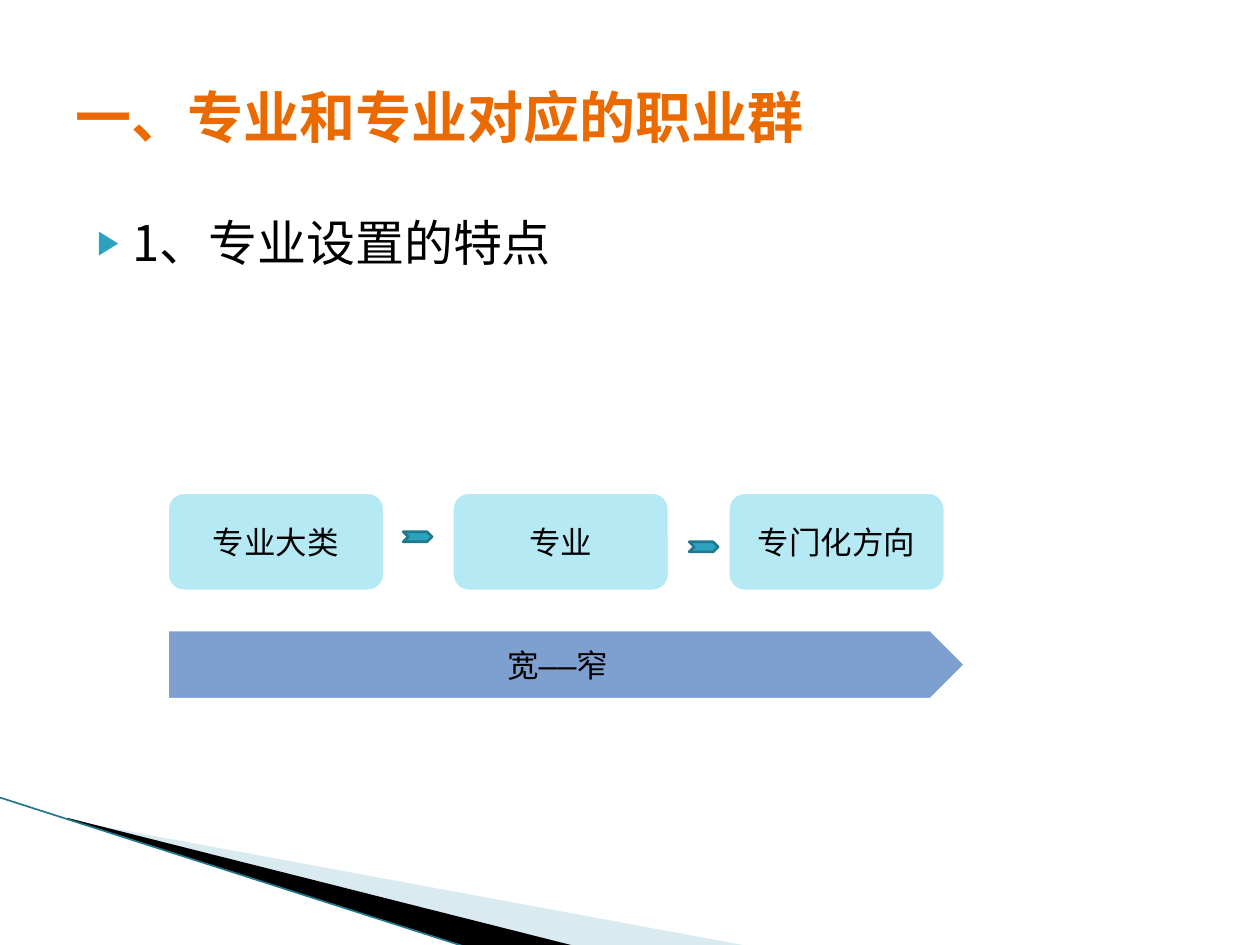
from lxml import etree
from pptx import Presentation
from pptx.dml.color import RGBColor
from pptx.enum import shapes, text
from pptx.oxml.ns import qn
from pptx.util import Inches, Pt

# Grid: 100 columns by 75 rows, each cell a tenth of an inch
COLUMNS, ROWS = 100, 75


def rgb(colour):
    return RGBColor.from_string(colour)


def add_element(parent, tag, **attributes):
    return etree.SubElement(parent, qn(tag), attributes)


class SlideBuilder:
    """Holds the style and the current slide; places are grid columns and rows."""

    heading_font = "Noto Sans CJK SC"
    label_font = "DejaVu Sans Mono"
    ink, accent, accent_dark = "000000", "2DA2BF", "21788D"

    def __init__(self, presentation):
        self.cell_width = presentation.slide_width / COLUMNS
        self.cell_height = presentation.slide_height / ROWS
        self.slide = presentation.slides.add_slide(presentation.slide_layouts[1])
        self.shapes = self.slide.shapes

    def point(self, column, row):
        return round(column * self.cell_width), round(row * self.cell_height)

    def box(self, column, row, width, height):
        return self.point(column, row) + self.point(width, height)

    def format_text(self, paragraph, size, font, colour, bold=False):
        paragraph.font.size = Pt(size)
        paragraph.font.name = font
        paragraph.font.bold = bold
        paragraph.font.color.rgb = rgb(colour)
        properties = paragraph.font._element
        add_element(properties, "a:ea", typeface=font)

    def placeholder(self, shape, place, words, anchor):
        """Fill a placeholder and bring it in front of the decoration."""
        shape.left, shape.top, shape.width, shape.height = self.box(*place)
        shape.element.getparent().append(shape.element)
        frame = shape.text_frame
        frame.text = words
        frame.auto_size = text.MSO_AUTO_SIZE.NONE
        frame.vertical_anchor = anchor
        paragraph = frame.paragraphs[0]
        paragraph.alignment = text.PP_ALIGN.LEFT
        paragraph.space_before = Pt(0)
        return paragraph

    def title(self, words, place):
        paragraph = self.placeholder(self.shapes.title, place, words,
                                     text.MSO_ANCHOR.MIDDLE)
        self.format_text(paragraph, 32, self.heading_font, "EA6A00", bold=True)

    def bullet(self, words, place):
        paragraph = self.placeholder(self.slide.placeholders[1], place, words,
                                     text.MSO_ANCHOR.TOP)
        properties = paragraph._p.get_or_add_pPr()
        properties.set("marL", str(Inches(0.4)))
        properties.set("indent", str(Inches(-0.28)))
        colour = add_element(properties, "a:buClr")
        add_element(colour, "a:srgbClr", val=self.accent)
        add_element(properties, "a:buSzPct", val="68000")
        add_element(properties, "a:buChar", char="▶")
        self.format_text(paragraph, 28, self.heading_font, self.ink)

    def polygon(self, points, fill, opacity=100):
        start, *others = [self.point(*point) for point in points]
        builder = self.shapes.build_freeform(*start)
        builder.add_line_segments(others, close=True)
        shape = builder.convert_to_shape()
        shape.shadow.inherit = False
        shape.line.fill.background()
        shape.fill.solid()
        shape.fill.fore_color.rgb = rgb(fill)
        if opacity < 100:
            colour = shape.element.spPr.find(".//" + qn("a:srgbClr"))
            add_element(colour, "a:alpha", val=str(opacity * 1000))

    def line(self, start, end, colour, width):
        connector = self.shapes.add_connector(
            shapes.MSO_CONNECTOR.STRAIGHT, *self.point(*start), *self.point(*end))
        connector.line.color.rgb = rgb(colour)
        connector.line.width = Pt(width)
        add_element(connector.element.spPr, "a:effectLst")

    def block(self, kind, place, fill, line, words=""):
        shape = self.shapes.add_shape(kind, *self.box(*place))
        shape.shadow.inherit = False
        shape.fill.solid()
        shape.fill.fore_color.rgb = rgb(fill)
        shape.line.color.rgb = rgb(line)
        shape.line.width = Pt(1.5)
        if words:
            frame = shape.text_frame
            frame.text = words
            frame.word_wrap = True
            frame.vertical_anchor = text.MSO_ANCHOR.MIDDLE
            paragraph = frame.paragraphs[0]
            paragraph.alignment = text.PP_ALIGN.CENTER
            self.format_text(paragraph, 18, self.label_font, self.ink)


def main():
    presentation = Presentation()
    presentation.slide_width, presentation.slide_height = Inches(10), Inches(7.5)
    builder = SlideBuilder(presentation)
    kinds = shapes.MSO_SHAPE

    builder.polygon([(5.5, 65.1), (59.5, 75.1), (45.6, 75.1), (5.5, 65)],
                    "A0CBDC", opacity=40)
    builder.polygon([(5.3, 64.9), (45.7, 75.1), (37.2, 75.2), (5.4, 65)],
                    builder.ink)
    builder.line((0, 63.3), (37.1, 75.2), builder.accent_dark, 0.95)

    builder.bullet("1、专业设置的特点", (5.5, 16.4, 90, 49.5))
    builder.title("一、专业和专业对应的职业群", (5, 3, 90, 12.5))

    for column, words in ((13.3, "专业大类"), (35.9, "专业"), (57.8, "专门化方向")):
        builder.block(kinds.FLOWCHART_ALTERNATE_PROCESS,
                      (column, 39.1, 17.2, 7.8), "B5E9F4", "FFFFFF", words)
    for column, row in ((32, 42.2), (54.7, 43)):
        builder.block(kinds.CHEVRON, (column, row, 2.3, 0.8),
                      builder.accent, builder.accent_dark)
    builder.block(kinds.PENTAGON, (13.3, 50, 63.3, 5.5),
                  "7DA0D0", "FFFFFF", "宽——窄")

    presentation.save("out.pptx")


if __name__ == "__main__":
    main()
